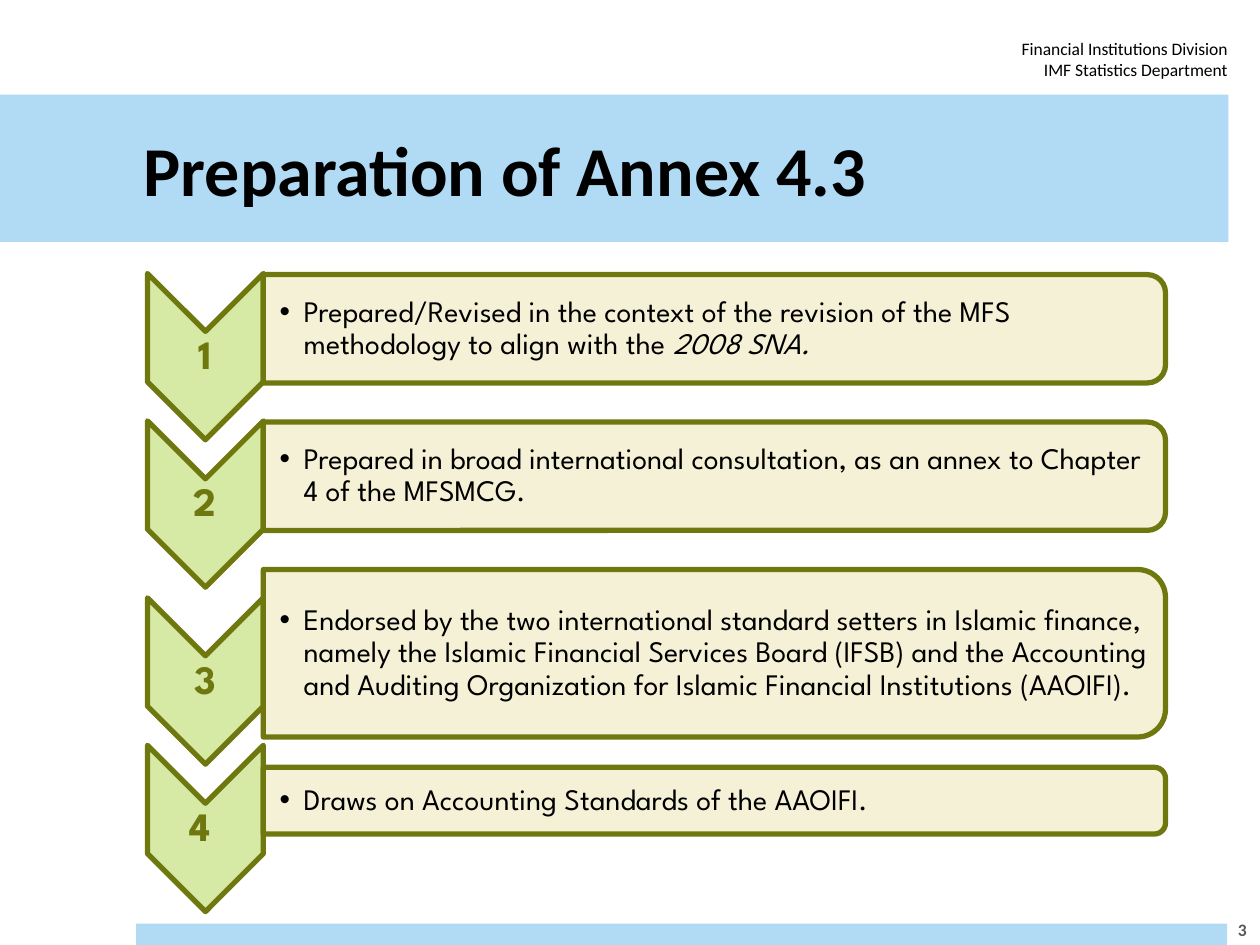
from pptx import Presentation
from pptx.dml.color import RGBColor
from pptx.enum.shapes import MSO_SHAPE
from pptx.enum.text import MSO_ANCHOR, MSO_AUTO_SIZE, PP_ALIGN
from pptx.oxml.ns import qn
from pptx.util import Inches, Pt
from lxml.etree import SubElement

# Content
TITLE = "Preparation of Annex 4.3"
HEADER = "Financial Institutions Division\vIMF Statistics Department"
PAGE_NUMBER = "3"
# Each step: numeral, panel height, text pieces as (text, italic)
STEPS = [
    ("1", 0.86, [("Prepared/Revised in the context of the revision of the MFS "
                  "methodology to align with the ", False), ("2008 SNA.", True)]),
    ("2", 0.86, [("Prepared in broad international consultation, as an annex to "
                  "Chapter 4 of the MFSMCG.", False)]),
    ("3", 1.33, [("Endorsed by the two international standard setters in Islamic "
                  "finance, namely the Islamic Financial Services Board (IFSB) and "
                  "the Accounting and Auditing Organization for Islamic Financial "
                  "Institutions (AAOIFI).", False)]),
    ("4 ", 0.53, [("Draws on Accounting Standards of the AAOIFI.", False)]),
]

THEME = {
    "band": "B1DAF5", "chevron": "D6E9A5", "panel": "F5F1D7", "olive": "6E780E",
    "black": "000000", "grey": "595959",
    "main": "Calibri", "display": "League Spartan",
    "title": 40, "numeral": 23, "body": 17, "small": 10, "outline": 3,
}

# Layout rules
FIRST_CENTRE, PITCH, BASE_HEIGHT = 2.61, 1.17, 0.86
CHEVRON_X, CHEVRON_DROP, CHEVRON_SIZE = 1.63, 0.22, (1.32, 0.92)
PANEL_LEFT, PANEL_WIDTH = 2.09, 7.16
CORNER_INSET = 0.05


def colour(name):
    return RGBColor.from_string(THEME[name])


def set_font(font, face, size, ink, bold=False):
    font.name, font.size, font.bold = THEME[face], Pt(THEME[size]), bold
    font.color.rgb = colour(ink)


def set_frame(frame, anchor, insets):
    frame.word_wrap = True
    frame.auto_size = MSO_AUTO_SIZE.NONE
    frame.vertical_anchor = anchor
    (frame.margin_left, frame.margin_top,
     frame.margin_right, frame.margin_bottom) = map(Inches, insets)


def add_text(page, place, align, insets=(0.1, 0.05, 0.1, 0.05), anchor=MSO_ANCHOR.MIDDLE):
    box = page.shapes.add_textbox(*map(Inches, place))
    set_frame(box.text_frame, anchor, insets)
    para = box.text_frame.paragraphs[0]
    para.alignment = align
    return para


def add_form(page, preset, place, fill, outlined=False):
    form = page.shapes.add_shape(preset, *map(Inches, place))
    form.shadow.inherit = False
    form.fill.solid()
    form.fill.fore_color.rgb = colour(fill)
    if outlined:
        form.line.color.rgb = colour("olive")
        form.line.width = Pt(THEME["outline"])
    else:
        form.line.fill.background()
    return form


def add_turned(page, preset, centre_x, centre_y, size, fill):
    """Outlined form turned a quarter; size is measured before turning."""
    width, height = size
    place = (centre_x - width / 2, centre_y - height / 2, width, height)
    add_form(page, preset, place, fill, outlined=True).rotation = 90


def add_bullet(para):
    props = para._p.get_or_add_pPr()
    props.set("marL", str(Inches(0.19)))
    props.set("indent", str(-Inches(0.19)))
    SubElement(props, qn("a:buFont")).set("typeface", "Arial")
    SubElement(props, qn("a:buChar")).set("char", "•")


def add_step(page, centre, numeral, height, pieces):
    # Chevron and its numeral
    chevron_y = centre + CHEVRON_DROP
    add_turned(page, MSO_SHAPE.CHEVRON, CHEVRON_X, chevron_y, CHEVRON_SIZE, "chevron")
    para = add_text(page, (CHEVRON_X - 0.46, chevron_y - 0.2, 0.92, 0.4),
                    PP_ALIGN.CENTER, (0.02,) * 4)
    para.text = numeral
    para.line_spacing = 0.9
    set_font(para.font, "display", "numeral", "olive", bold=True)

    # Panel and its bulleted text
    add_turned(page, MSO_SHAPE.ROUND_2_SAME_RECTANGLE, PANEL_LEFT + PANEL_WIDTH / 2,
               centre, (height, PANEL_WIDTH), "panel")
    inset = CORNER_INSET * height
    place = (PANEL_LEFT, centre - height / 2 + inset, PANEL_WIDTH - inset, height - 2 * inset)
    para = add_text(page, place, PP_ALIGN.LEFT, (0.13, 0.01, 0.01, 0.01))
    para.line_spacing = 0.9
    add_bullet(para)
    set_font(para.font, "display", "body", "black")
    for text, italic in pieces:
        span = para.add_run()
        span.text = text
        if italic:
            span.font.italic = True


def main():
    deck = Presentation()
    deck.slide_width, deck.slide_height = Inches(10), Inches(7.5)
    page = deck.slides.add_slide(deck.slide_layouts[5])

    # Footer band and header
    add_form(page, MSO_SHAPE.RECTANGLE, (1.08, 7.33, 8.66, 0.17), "band")
    para = add_text(page, (7.42, 0.25, 2.42, 0.44), PP_ALIGN.RIGHT, anchor=MSO_ANCHOR.TOP)
    para.text = HEADER
    set_font(para.font, "main", "small", "black")

    # Title band
    title = page.shapes.title
    title.left, title.top, title.width, title.height = map(Inches, (0, 0.75, 9.75, 1.17))
    title.fill.solid()
    title.fill.fore_color.rgb = colour("band")
    set_frame(title.text_frame, MSO_ANCHOR.MIDDLE, (1.14, 0.04, 0.3, 0.04))
    para = title.text_frame.paragraphs[0]
    para.text = TITLE
    para.alignment = PP_ALIGN.LEFT
    set_font(para.font, "main", "title", "black", bold=True)

    # Page number
    para = add_text(page, (9.61, 7.17, 0.5, 0.42), PP_ALIGN.CENTER)
    para.text = PAGE_NUMBER
    set_font(para.font, "main", "small", "grey", bold=True)

    # Steps: a taller panel pushes its own row down
    centre = FIRST_CENTRE
    for index, (numeral, height, pieces) in enumerate(STEPS):
        if index:
            centre += PITCH + max(0, (height - BASE_HEIGHT) / 2)
        add_step(page, centre, numeral, height, pieces)

    deck.save("out.pptx")


if __name__ == "__main__":
    main()
